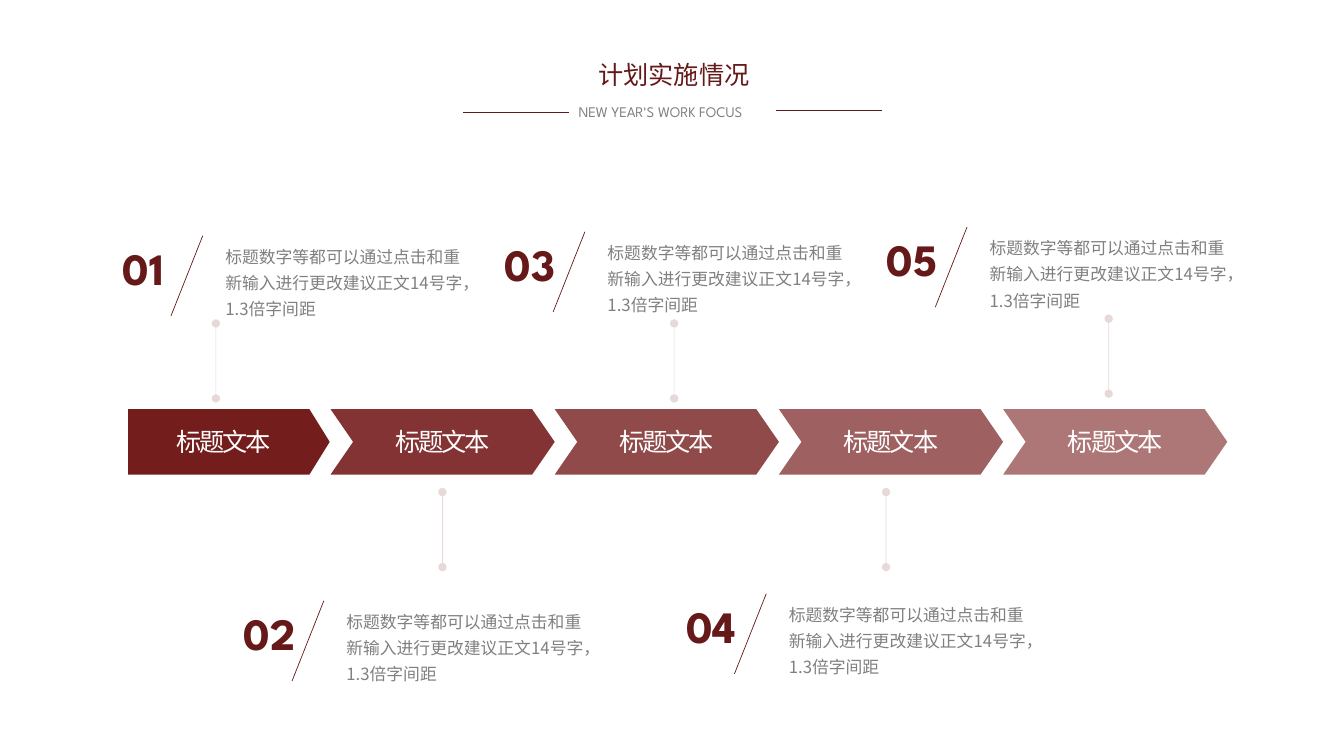
import pptx
import pptx.util
import pptx.dml.color
import pptx.enum.shapes
import pptx.enum.text
import pptx.oxml.ns
import pptx.oxml.xmlchemy

Cm = pptx.util.Cm
SHAPES = pptx.enum.shapes.MSO_SHAPE
CHINESE = "Noto Sans CJK SC"
LATIN = "League Spartan"
COLORS = {"dark": "651919", "gray": "808080", "white": "FFFFFF", "pin": "AD7777"}
STEP_FILLS = ["741D1D", "833334", "904A49", "9E6061", "AD7777"]
STEP_LABEL = "标题文本"
BODY = "标题数字等都可以通过点击和重新输入进行更改建议正文14号字，1.3倍字间距"
ITEMS = [
    ("01", 2.84, 5.94),
    ("03", 12.47, 5.84),
    ("05", 22.1, 5.72),
    ("02", 5.89, 15.14),
    ("04", 17.04, 14.96),
]
PINS = [(5.44, 8.15), (11.15, 12.4), (16.99, 8.15), (22.33, 12.4), (27.94, 8.03)]
PIN_LENGTH = 1.89


def rgb(color):
    return pptx.dml.color.RGBColor.from_string(color)


def add_child(parent, tag, **attributes):
    child = pptx.oxml.xmlchemy.OxmlElement(tag)
    for name, value in attributes.items():
        child.set(name, value)
    parent.append(child)
    return child


def write_text(frame, text, size, font, color, bold=False):
    frame.text = text
    para = frame.paragraphs[0]
    span = para.runs[0]
    span.font.size = pptx.util.Pt(size)
    span.font.name = font
    span.font.bold = bold
    span.font.color.rgb = rgb(color)
    add_child(span._r.get_or_add_rPr(), "a:ea", typeface=font)
    return para


def add_text(page, left, top, width, height, text, size, font, color, bold=False, wrap=True):
    box = page.shapes.add_textbox(Cm(left), Cm(top), Cm(width), Cm(height))
    box.text_frame.word_wrap = wrap
    box.text_frame.auto_size = pptx.enum.text.MSO_AUTO_SIZE.SHAPE_TO_FIT_TEXT
    return write_text(box.text_frame, text, size, font, color, bold)


def add_line(page, x1, y1, x2, y2, color):
    line = page.shapes.add_connector(
        pptx.enum.shapes.MSO_CONNECTOR.STRAIGHT, Cm(x1), Cm(y1), Cm(x2), Cm(y2))
    line.line.color.rgb = rgb(color)
    line.line.width = pptx.util.Pt(0.5)
    add_child(line._element.spPr, "a:effectLst")
    return line


def add_pin(page, x, top):
    pin = add_line(page, x, top + PIN_LENGTH, x, top, COLORS["pin"])
    outline = pin._element.spPr.find(pptx.oxml.ns.qn("a:ln"))
    fill = outline.find(pptx.oxml.ns.qn("a:solidFill"))
    add_child(fill[0], "a:alpha", val="28000")
    add_child(outline, "a:headEnd", type="oval")
    add_child(outline, "a:tailEnd", type="oval")


def add_step(page, preset, left, width, adjustment, fill):
    step = page.shapes.add_shape(preset, Cm(left), Cm(10.31), Cm(width), Cm(1.65))
    step.adjustments[0] = adjustment
    step.shadow.inherit = False
    step.fill.solid()
    step.fill.fore_color.rgb = rgb(fill)
    step.line.fill.background()
    step.text_frame.vertical_anchor = pptx.enum.text.MSO_ANCHOR.MIDDLE
    para = write_text(step.text_frame, STEP_LABEL, 18, CHINESE, COLORS["white"])
    para.alignment = pptx.enum.text.PP_ALIGN.CENTER
    para.runs[0]._r.get_or_add_rPr().set("spc", "-150")


def add_item(page, number, left, top):
    add_text(page, left, top, 1.98, 1.63, number, 32, LATIN, COLORS["dark"], bold=True)
    add_line(page, left + 2.27, top, left + 1.47, top + 2.02, COLORS["dark"])
    para = add_text(page, left + 2.59, top, 6.73, 2.18, BODY, 12, CHINESE, COLORS["gray"])
    para.line_spacing = 1.3


def add_heading(page):
    add_text(page, 14.83, 1.37, 5.64, 1.02, "计划实施情况", 18, CHINESE, COLORS["dark"])
    add_text(page, 14.33, 2.46, 5.23, 0.71, "NEW YEAR'S WORK FOCUS", 10.5, LATIN,
             COLORS["gray"], wrap=False)
    for left, top in [(11.66, 2.82), (19.56, 2.77)]:
        add_line(page, left + 2.67, top, left, top, COLORS["dark"])


def main():
    deck = pptx.Presentation()
    deck.slide_width = Cm(33.87)
    deck.slide_height = Cm(19.05)
    page = deck.slides.add_slide(deck.slide_layouts[6])
    add_heading(page)
    add_step(page, SHAPES.PENTAGON, 3.23, 5.08, 0.31, STEP_FILLS[0])
    for index, fill in enumerate(STEP_FILLS[1:]):
        add_step(page, SHAPES.CHEVRON, 8.33 + 5.65 * index, 5.65, 0.345, fill)
    for number, left, top in ITEMS:
        add_item(page, number, left, top)
    for x, top in PINS:
        add_pin(page, x, top)
    deck.save("out.pptx")


if __name__ == "__main__":
    main()
